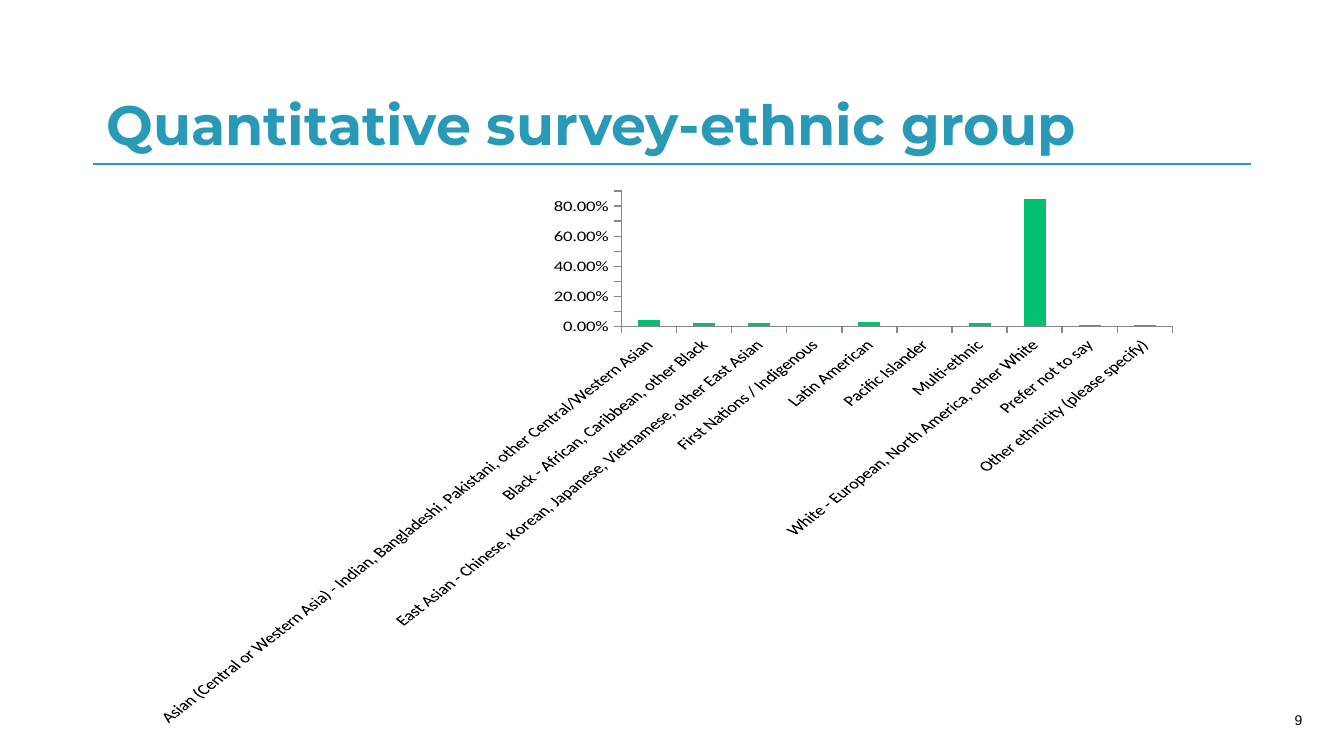
from lxml import etree
from pptx import Presentation
from pptx.chart.data import CategoryChartData
from pptx.dml.color import RGBColor
from pptx.enum import chart as charts, shapes, text
from pptx.oxml.ns import qn
from pptx.util import Inches, Pt

TEAL = RGBColor(0x28, 0x99, 0xB6)
GREEN = RGBColor(0x00, 0xBF, 0x6F)
BLACK = RGBColor(0, 0, 0)
GREY = RGBColor(0x87, 0x87, 0x87)

TITLE = "Quantitative survey-ethnic group"
PAGE_NUMBER = "9"
ETHNIC_GROUPS = [
    ("Asian (Central or Western Asia) - Indian, Bangladeshi, Pakistani, "
     "other Central/Western Asian", 0.04),
    ("Black - African, Caribbean, other Black", 0.02),
    ("East Asian - Chinese, Korean, Japanese, Vietnamese, other East Asian", 0.02),
    ("First Nations / Indigenous", 0),
    ("Latin American", 0.03),
    ("Pacific Islander", 0),
    ("Multi-ethnic", 0.02),
    ("White - European, North America, other White", 0.85),
    ("Prefer not to say", 0.01),
    ("Other ethnicity (please specify)", 0.01),
]
PAGE_WIDTH = 10
PAGE_HEIGHT = PAGE_WIDTH * 9 / 16
LEFT, WIDTH, RULE_Y = 0.69, 8.62, 1.22


def place(shape, left, top, width, height):
    shape.left, shape.top = Inches(left), Inches(top)
    shape.width, shape.height = Inches(width), Inches(height)


def write(box, words, *, font, size, color, bold=False, anchor, align, spacing=1.0):
    frame = box.text_frame
    frame.word_wrap = True
    frame.auto_size = text.MSO_AUTO_SIZE.NONE
    frame.vertical_anchor = anchor
    para = frame.paragraphs[0]
    para.alignment = align
    para.line_spacing = spacing
    span = para.add_run()
    span.text = words
    span.font.name, span.font.size, span.font.bold = font, Pt(size), bold
    span.font.color.rgb = color


def add_rule(page):
    rule = page.shapes.add_connector(
        shapes.MSO_CONNECTOR.STRAIGHT,
        Inches(LEFT), Inches(RULE_Y), Inches(LEFT + WIDTH), Inches(RULE_Y))
    rule.line.color.rgb = TEAL
    rule.line.width = Pt(1)
    etree.SubElement(rule._element.spPr, qn("a:effectLst"))


def add_page_number(page):
    box = page.shapes.add_textbox(Inches(7.44), Inches(5.21), Inches(2.25), Inches(0.3))
    write(box, PAGE_NUMBER, font="Arial", size=7.5, color=BLACK,
          anchor=text.MSO_ANCHOR.MIDDLE, align=text.PP_ALIGN.RIGHT)
    frame = box.text_frame
    frame.margin_left, frame.margin_right = Inches(0.07), 0
    frame.margin_top = frame.margin_bottom = Inches(0.04)


def add_survey_chart(page):
    data = CategoryChartData(number_format="0.00%")
    data.categories = [group for group, share in ETHNIC_GROUPS]
    data.add_series("Series 1", [share for group, share in ETHNIC_GROUPS])
    chart = page.shapes.add_chart(
        charts.XL_CHART_TYPE.COLUMN_CLUSTERED,
        Inches(1.01), Inches(1.36), Inches(7.87), Inches(4.04), data).chart
    chart.has_title = chart.has_legend = False
    chart.font.name, chart.font.size = "Calibri", Pt(10)
    chart.font.color.rgb = BLACK

    plot = chart.plots[0]
    plot.gap_width = 150
    plot.vary_by_categories = False
    bars = plot.series[0].format.fill
    bars.solid()
    bars.fore_color.rgb = GREEN

    for axis in (chart.category_axis, chart.value_axis):
        axis.has_major_gridlines = False
        axis.major_tick_mark = charts.XL_TICK_MARK.OUTSIDE
        axis.minor_tick_mark = charts.XL_TICK_MARK.NONE
        axis.format.line.color.rgb = GREY
        labels = axis.tick_labels.font
        labels.name, labels.size = "Calibri", Pt(10)
        labels.color.rgb = BLACK

    shares = chart.value_axis
    shares.minimum_scale, shares.maximum_scale, shares.major_unit = 0, 0.9, 0.1
    shares.tick_labels.number_format = "0.00%"
    shares.tick_labels.number_format_is_linked = False

    slant = chart.category_axis._element.find(qn("c:txPr")).find(qn("a:bodyPr"))
    slant.set("rot", str(-45 * 60000))
    slant.set("vert", "horz")


def main():
    deck = Presentation()
    deck.slide_width, deck.slide_height = Inches(PAGE_WIDTH), Inches(PAGE_HEIGHT)
    page = deck.slides.add_slide(deck.slide_layouts[5])
    add_rule(page)
    add_page_number(page)
    title = page.shapes.title
    place(title, LEFT, 0.3, WIDTH, RULE_Y - 0.3)
    write(title, TITLE, font="Montserrat", size=29.7, color=TEAL, bold=True,
          anchor=text.MSO_ANCHOR.BOTTOM, align=text.PP_ALIGN.LEFT, spacing=0.9)
    add_survey_chart(page)
    deck.save("out.pptx")


if __name__ == "__main__":
    main()
